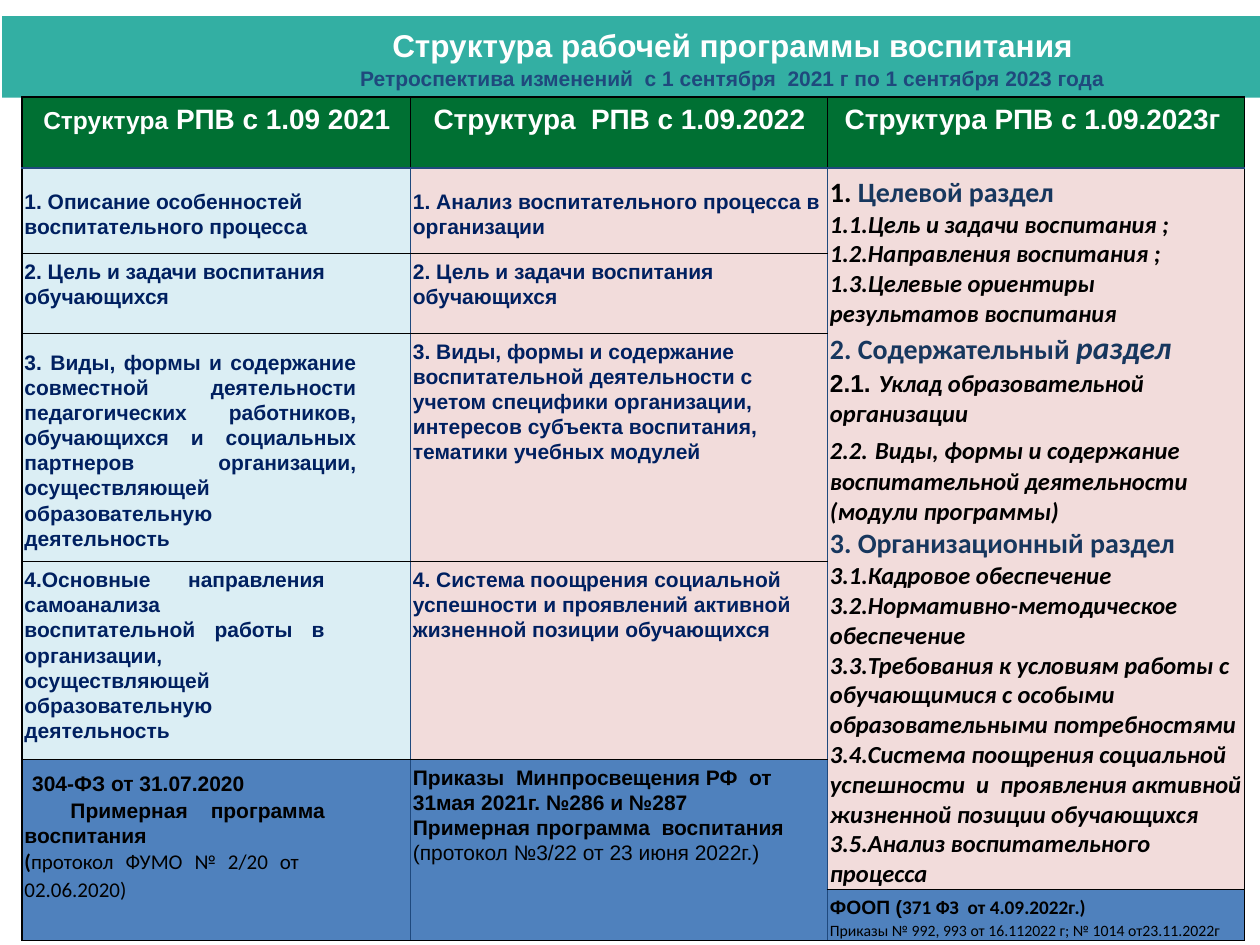
"""Builds a slide comparing the programme structure across three years."""
import dataclasses

import lxml.etree
import pptx
import pptx.dml.color
import pptx.enum.shapes
import pptx.enum.text
import pptx.oxml.ns
import pptx.util

Pt = pptx.util.Pt
ALIGN = pptx.enum.text.PP_ALIGN
MIDDLE = pptx.enum.text.MSO_ANCHOR.MIDDLE
TOP = pptx.enum.text.MSO_ANCHOR.TOP
BLACK, WHITE, NAVY, BLUE, STEEL = "000000", "FFFFFF", "002060", "1F497D", "17375E"
GREEN, TEAL, SKY, ROSE, AZURE = "007033", "33AFA3", "DBEEF4", "F2DCDB", "4F81BD"


def colour(value):
    return pptx.dml.color.RGBColor.from_string(value)


@dataclasses.dataclass(frozen=True)
class Style:
    size: float = 12
    color: str = NAVY
    face: str = "Arial"
    bold: bool = True
    italic: bool = False

    def paint(self, font):
        font.size, font.name = Pt(self.size), self.face
        font.bold, font.italic = self.bold, self.italic
        font.color.rgb = colour(self.color)


@dataclasses.dataclass
class Paragraph:
    spans: list
    align: object = ALIGN.LEFT
    spacing: float = 1.07
    left: float = 0
    first: float = 0
    right: float = 0


@dataclasses.dataclass
class Entry:
    row: int
    column: int
    paragraphs: list
    fill: str
    anchor: object = TOP
    rows: int = 1


class Builder:
    def __init__(self, deck):
        self.page = deck.slides.add_slide(deck.slide_layouts[6])

    def fill_text(self, frame, paragraphs):
        frame.word_wrap = True
        for index, item in enumerate(paragraphs):
            para = frame.add_paragraph() if index else frame.paragraphs[0]
            para.alignment, para.line_spacing = item.align, item.spacing
            para.space_before = para.space_after = Pt(0)
            margins = para._p.get_or_add_pPr()
            for name, value in (("marL", item.left), ("marR", item.right), ("indent", item.first)):
                margins.set(name, str(Pt(value)))
            if len({style for _, style in item.spans}) == 1:
                item.spans[0][1].paint(para.font)
            for text, style in item.spans:
                span = para.add_run()
                span.text = text
                style.paint(span.font)

    def banner(self, left, top, width, height, fill, paragraphs):
        box = self.page.shapes.add_shape(
            pptx.enum.shapes.MSO_SHAPE.RECTANGLE, Pt(left), Pt(top), Pt(width), Pt(height))
        box.shadow.inherit = False
        box.fill.solid()
        box.fill.fore_color.rgb = colour(fill)
        box.line.fill.background()
        box.text_frame.vertical_anchor = MIDDLE
        self.fill_text(box.text_frame, paragraphs)

    def border(self, cell, edges):
        properties = cell._tc.get_or_add_tcPr()
        for side, value in zip("LRTB", edges):
            line = lxml.etree.SubElement(
                properties, pptx.oxml.ns.qn(f"a:ln{side}"), w=str(Pt(1)))
            fill = lxml.etree.SubElement(line, pptx.oxml.ns.qn("a:solidFill"))
            lxml.etree.SubElement(fill, pptx.oxml.ns.qn("a:srgbClr"), val=value)

    def table(self, left, top, widths, heights, entries):
        grid = self.page.shapes.add_table(
            len(heights), len(widths), Pt(left), Pt(top), Pt(sum(widths)), Pt(sum(heights))).table
        grid.first_row = grid.horz_banding = False
        for column, width in zip(grid.columns, widths):
            column.width = Pt(width)
        for row, height in zip(grid.rows, heights):
            row.height = Pt(height)
        last = len(widths) - 1
        for entry in entries:
            inner = BLUE if entry.row else BLACK
            edges = (inner if entry.column else BLACK, inner if entry.column < last else BLACK,
                     BLUE if entry.row == 1 else BLACK, BLACK if entry.row else BLUE)
            for row in range(entry.row, entry.row + entry.rows):
                cell = grid.cell(row, entry.column)
                self.border(cell, edges)
                cell.fill.solid()
                cell.fill.fore_color.rgb = colour(entry.fill)
                cell.margin_left, cell.margin_right = Pt(1.5), Pt(0.75)
                cell.margin_top, cell.margin_bottom = Pt(3), Pt(0)
            cell = grid.cell(entry.row, entry.column)
            if entry.rows > 1:
                cell.merge(grid.cell(entry.row + entry.rows - 1, entry.column))
            cell.vertical_anchor = entry.anchor
            self.fill_text(cell.text_frame, entry.paragraphs)


BODY = Style()
LAW = Style(color=BLACK)
LAW_PLAIN = Style(color=BLACK, bold=False)
HEAD = Style(16, WHITE)
SECTION = Style(16, STEEL, "Calibri")
POINT = Style(14, BLACK, "Calibri", italic=True)


def simple(text, style=BODY, **options):
    return Paragraph([(text, style)], **options)


def point(text):
    return simple(text, POINT, spacing=1)


def section(*spans):
    return Paragraph(list(spans), spacing=1)


def entries():
    centre, justify = ALIGN.CENTER, ALIGN.JUSTIFY
    headers = [
        [("Структура", Style(14, WHITE)), (" РПВ с 1.09 2021", HEAD)],
        [("Структура  РПВ с 1.09.2022", HEAD)],
        [("Структура РПВ с 1.09.2023г ", HEAD)]]
    for column, spans in enumerate(headers):
        yield Entry(0, column, [Paragraph(spans, centre)], GREEN)
    first = [
        simple("1. Описание особенностей воспитательного процесса"),
        simple("2. Цель и задачи воспитания обучающихся"),
        simple("3. Виды, формы и содержание совместной деятельности педагогических работников, "
               "обучающихся и социальных партнеров организации, осуществляющей "
               "образовательную деятельность", align=justify, right=30),
        simple("4.Основные направления самоанализа воспитательной работы в организации, "
               "осуществляющей образовательную деятельность", align=justify, right=48)]
    second = [
        simple("1. Анализ воспитательного процесса в организации"),
        simple("2. Цель и задачи воспитания обучающихся"),
        simple("3. Виды, формы и содержание воспитательной деятельности с учетом специфики "
               "организации, интересов субъекта воспитания, тематики учебных модулей"),
        simple("4. Система поощрения социальной успешности и проявлений активной жизненной "
               "позиции обучающихся")]
    for column, (items, fill, centred) in enumerate([(first, SKY, (1, 3)), (second, ROSE, (1,))]):
        for row, item in enumerate(items, 1):
            yield Entry(row, column, [item], fill, MIDDLE if row in centred else TOP)
    yield Entry(1, 2, [
        Paragraph([("1. ", Style(16, BLACK, "Calibri")), ("Целевой раздел", SECTION)]),
        point("1.1.Цель и задачи воспитания ; 1.2.Направления воспитания ;"),
        point("1.3.Целевые ориентиры результатов воспитания"),
        section(("2. Содержательный ", SECTION),
                ("раздел", Style(18, STEEL, "Calibri", italic=True))),
        section(("2.1.", Style(14, BLACK)), (" ", Style(16)),
                ("Уклад образовательной организации", POINT)),
        section(("2.2.", POINT), (" ", Style(18, BLACK, "Calibri", italic=True)),
                ("Виды, формы и содержание воспитательной деятельности (модули программы)", POINT)),
        section(("3. Организационный раздел", SECTION)),
        point("3.1.Кадровое обеспечение"),
        point("3.2.Нормативно-методическое обеспечение"),
        point("3.3.Требования к условиям работы с обучающимися с особыми "
              "образовательными потребностями"),
        point("3.4.Система поощрения социальной успешности  и  проявления активной "
              "жизненной позиции обучающихся"),
        point("3.5.Анализ воспитательного процесса")], ROSE, MIDDLE, 5)
    yield Entry(5, 0, [
        Paragraph([(" ", Style(16)), ("304-ФЗ от 31.07.2020", LAW)], justify, right=48),
        simple("  Примерная программа воспитания", LAW, align=justify, right=48),
        Paragraph([("(", Style(12, BLACK, "Calibri")),
                   ("протокол ФУМО № 2/20 от  02.06.2020)", Style(12, BLACK, "Calibri", False))],
                  justify, right=56)], AZURE, rows=2)
    yield Entry(5, 1, [
        simple("Приказы  Минпросвещения РФ  от 31мая 2021г. №286 и №287", LAW),
        Paragraph([("Примерная программа  воспитания ", LAW),
                   ("(протокол №3/22 от 23 июня 2022г.)", LAW_PLAIN)])], AZURE, rows=2)
    yield Entry(6, 2, [
        Paragraph([("ФООП (", Style(11, BLACK)),
                   ("371 ФЗ  от 4.09.2022г.)", Style(11, BLACK, "Calibri"))]),
        simple("Приказы № 992, 993 от 16.112022 г; № 1014 от23.11.2022г",
               Style(9, BLACK, "Calibri", False))], AZURE, MIDDLE)


def main():
    deck = pptx.Presentation()
    deck.slide_width, deck.slide_height = Pt(720), Pt(540)
    builder = Builder(deck)
    titles = [("Структура рабочей программы воспитания", Style(18, WHITE)),
              ("Ретроспектива изменений  с 1 сентября  2021 г по 1 сентября 2023 года",
               Style(12, BLUE))]
    builder.banner(1.2, 9.2, 720, 46.6, TEAL, [
        simple(text, style, align=ALIGN.CENTER, spacing=1.08, left=70, first=45)
        for text, style in titles])
    builder.table(12.5, 55.5, [222, 238.3, 238.3], [40.5, 49, 45.5, 130.5, 113, 71.5, 23],
                  entries())
    deck.save("out.pptx")


if __name__ == "__main__":
    main()
